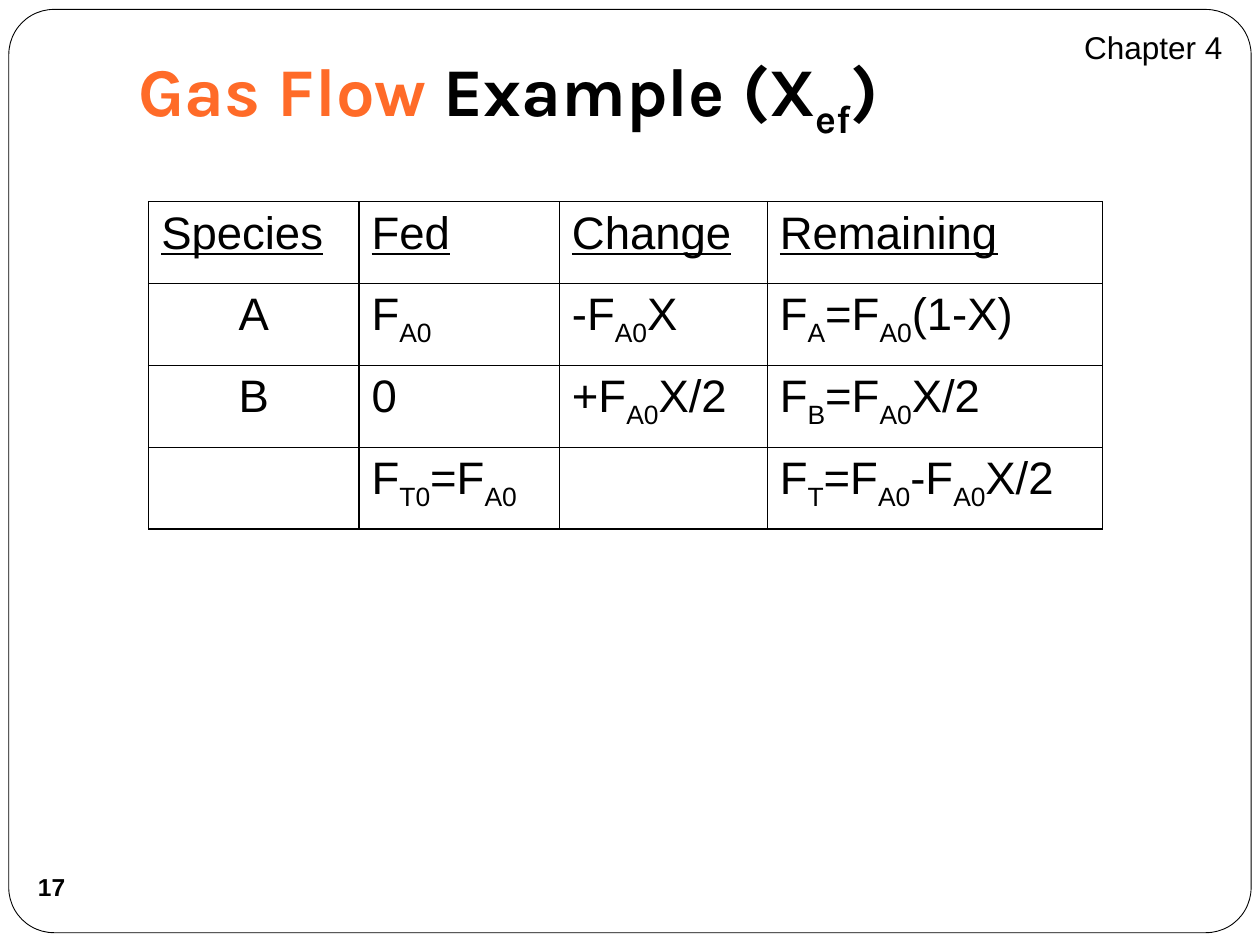
from dataclasses import dataclass

from lxml import etree
from pptx import Presentation
from pptx import util as u
from pptx.dml.color import RGBColor
from pptx.enum import shapes, text
from pptx.oxml.ns import qn

WIDE, HIGH = 10, 7.5
HEX = {"ink": "000000", "paper": "FFFFFF", "accent": "FF6B28"}
LEFT, MID, RIGHT = text.PP_ALIGN.LEFT, text.PP_ALIGN.CENTER, text.PP_ALIGN.RIGHT
TOP, CORE = text.MSO_ANCHOR.TOP, text.MSO_ANCHOR.MIDDLE

# Underscores enclose each subscript
ROWS = [
    ["Species", "Fed", "Change", "Remaining"],
    ["A", "F_A0_", "-F_A0_X", "F_A_=F_A0_(1-X)"],
    ["B", "0", "+F_A0_X/2", "F_B_=F_A0_X/2"],
    ["", "F_T0_=F_A0_", "", "F_T_=F_A0_-F_A0_X/2"],
]
COLS = [1.67, 1.59, 1.65, 2.66]
ROW = 0.65


@dataclass
class Box:
    """A place given as shares of the slide's size."""
    x: float
    y: float
    w: float
    h: float

    def spot(self) -> list:
        sides = (self.x * WIDE, self.y * HIGH, self.w * WIDE, self.h * HIGH)
        return [u.Inches(s) for s in sides]


@dataclass
class Style:
    size: float
    face: str = "Arial"
    bold: bool = False
    under: bool = False


def tone(name: str) -> RGBColor:
    return RGBColor.from_string(HEX[name])


def write(par, words: str, style: Style, ink: str = "ink") -> None:
    """Add words to a paragraph, lowering the parts between underscores."""
    form = {"size": u.Pt(style.size), "name": style.face,
            "bold": style.bold, "underline": style.under}
    for i, part in enumerate(words.split("_")):
        if not part:
            continue
        run = par.add_run()
        run.text = part
        for key, val in form.items():
            setattr(run.font, key, val)
        run.font.color.rgb = tone(ink)
        if i % 2:
            run.font._element.set("baseline", "-25000")


def shape(slide, kind, box: Box):
    """Add a plain white shape without a shadow."""
    item = slide.shapes.add_shape(kind, *box.spot())
    item.shadow.inherit = False
    item.fill.solid()
    item.fill.fore_color.rgb = tone("paper")
    return item


def edge(cell) -> None:
    """Draw a thin line on all four sides of a cell."""
    props = cell._tc.get_or_add_tcPr()
    for i, tag in enumerate(("a:lnL", "a:lnR", "a:lnT", "a:lnB")):
        line = etree.Element(qn(tag), w=str(u.Pt(1)))
        fill = etree.SubElement(line, qn("a:solidFill"))
        etree.SubElement(fill, qn("a:srgbClr"), val=HEX["ink"])
        props.insert(i, line)


def grid(slide, x: float, y: float) -> None:
    """Build the species table from its rows and column widths."""
    size = [u.Inches(n) for n in (x, y, sum(COLS), ROW * len(ROWS))]
    table = slide.shapes.add_table(len(ROWS), len(COLS), *size).table
    for col, wide in zip(table.columns, COLS):
        col.width = u.Inches(wide)
    for r, row in enumerate(ROWS):
        table.rows[r].height = u.Inches(ROW)
        for c, words in enumerate(row):
            cell = table.cell(r, c)
            cell.fill.solid()
            cell.fill.fore_color.rgb = tone("paper")
            edge(cell)
            par = cell.text_frame.paragraphs[0]
            par.alignment = MID if r and not c else LEFT
            write(par, words, Style(26, under=r == 0))


def main() -> None:
    deck = Presentation()
    deck.slide_width, deck.slide_height = u.Inches(WIDE), u.Inches(HIGH)
    slide = deck.slides.add_slide(deck.slide_layouts[5])

    # Frame around the slide
    frame = shape(slide, shapes.MSO_SHAPE.ROUNDED_RECTANGLE,
                  Box(0.007, 0.01, 0.986, 0.977))
    frame.adjustments[0] = 0.049
    frame.line.color.rgb = tone("ink")
    frame.line.width = u.Pt(0.5)

    # Page number
    page = shape(slide, shapes.MSO_SHAPE.OVAL, Box(0.016, 0.905, 0.05, 0.067))
    page.line.fill.background()
    body = page.text_frame
    form = {"margin_left": 0, "margin_right": 0, "margin_top": 0,
            "margin_bottom": 0, "word_wrap": False, "vertical_anchor": CORE}
    for key, val in form.items():
        setattr(body, key, val)
    body.paragraphs[0].alignment = MID
    write(body.paragraphs[0], "17", Style(14, bold=True))

    grid(slide, 1.18, 1.6)

    # Title, brought in front of the frame
    title = slide.shapes.title
    slide.shapes._spTree.append(title._element)
    spot = Box(0.1, 0.04, 0.85, 0.12).spot()
    for key, val in zip(("left", "top", "width", "height"), spot):
        setattr(title, key, val)
    title.text_frame.vertical_anchor = CORE
    par = title.text_frame.paragraphs[0]
    par.alignment = LEFT
    head = Style(39, "Karla", bold=True)
    write(par, "Gas Flow ", head, "accent")
    write(par, "Example (X_ef_)", head)

    # Chapter mark
    mark = slide.shapes.add_textbox(*Box(0.704, 0.023, 0.276, 0.053).spot())
    mark.text_frame.word_wrap = True
    mark.text_frame.vertical_anchor = TOP
    par = mark.text_frame.paragraphs[0]
    par.alignment = RIGHT
    write(par, "Chapter 4", Style(18))

    deck.save("out.pptx")


if __name__ == "__main__":
    main()
